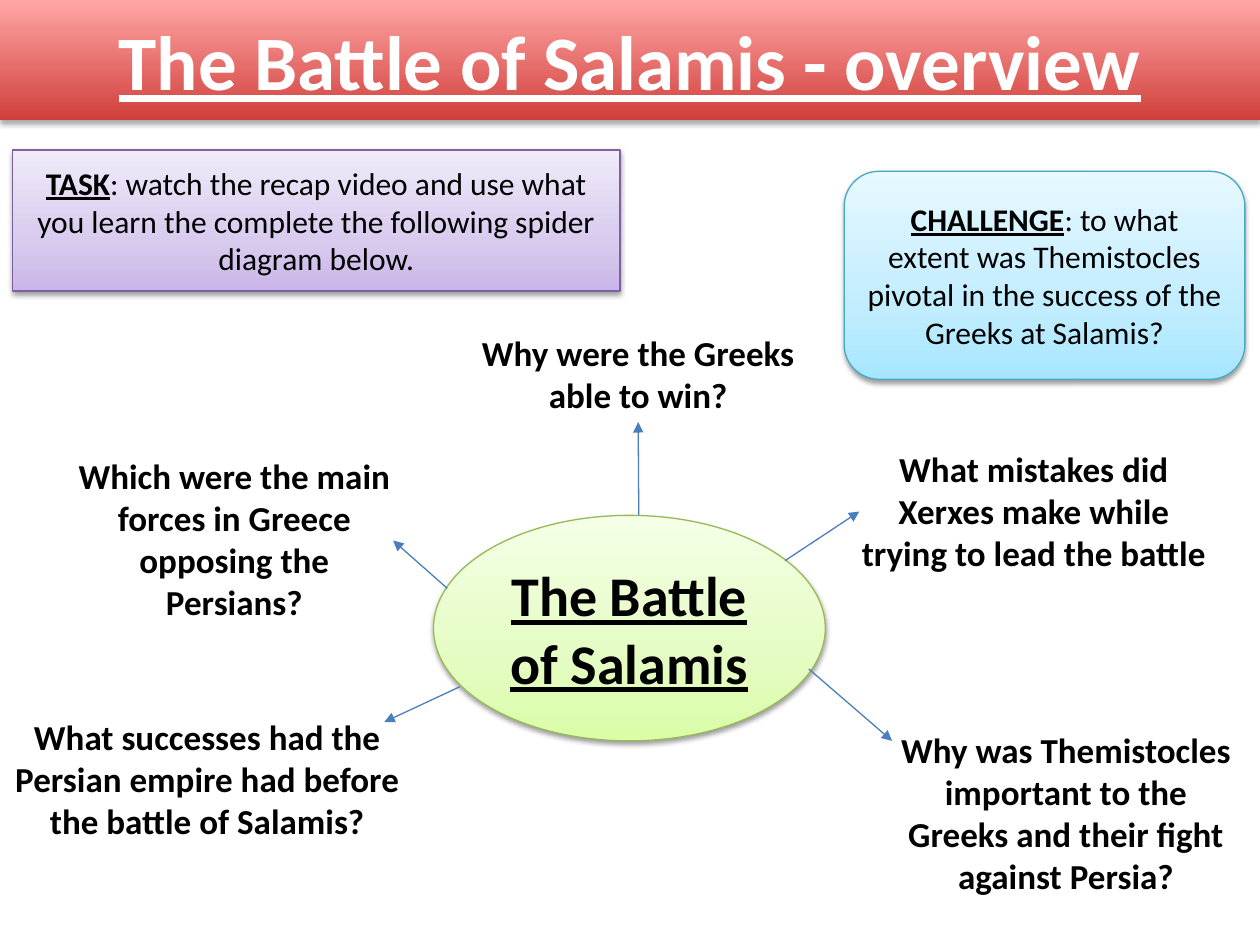
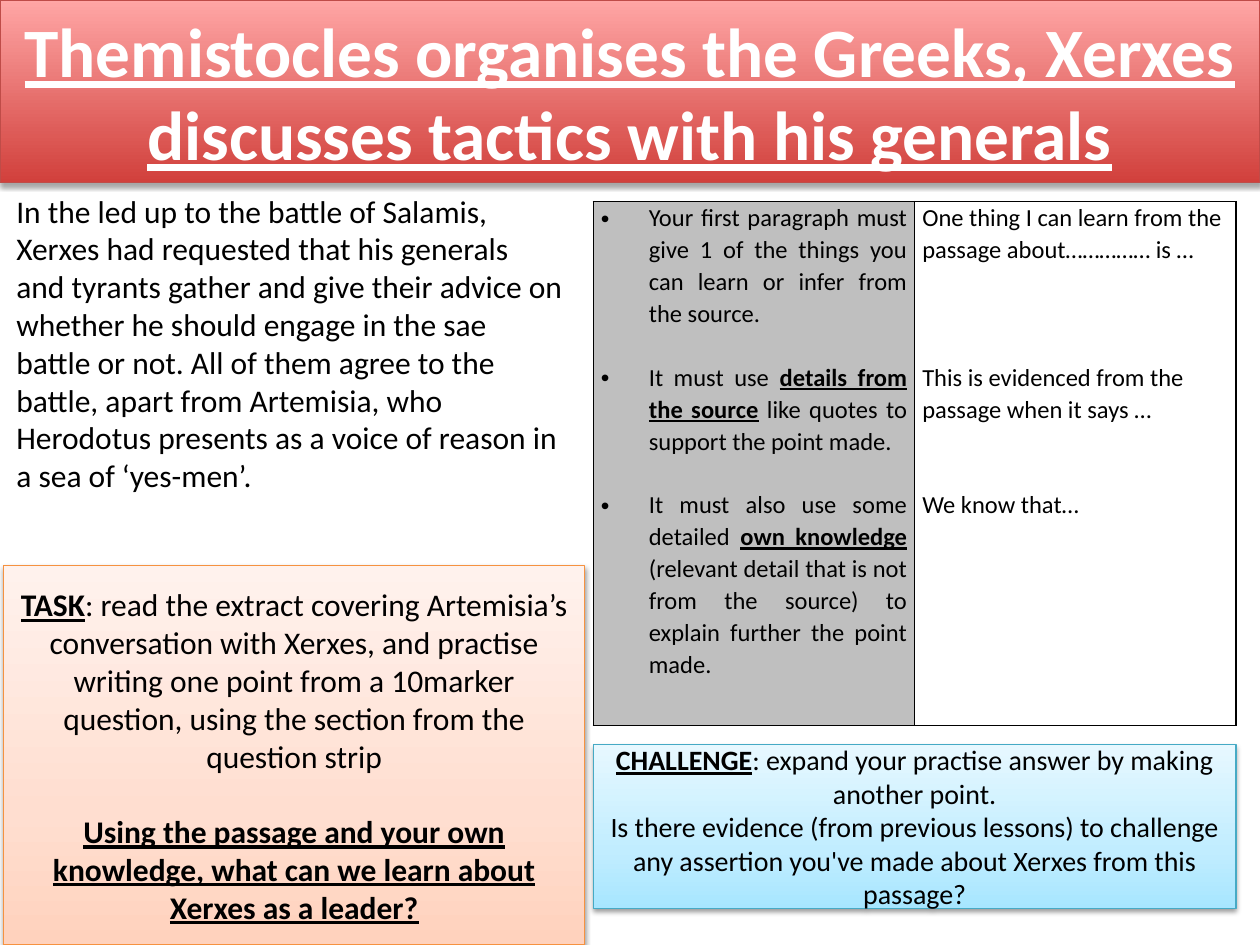
from copy import deepcopy

from lxml.etree import SubElement
from pptx import Presentation
from pptx.dml.color import RGBColor
from pptx.enum.shapes import MSO_CONNECTOR, MSO_SHAPE
from pptx.enum.text import MSO_ANCHOR, MSO_AUTO_SIZE, PP_ALIGN
from pptx.oxml import parse_xml
from pptx.oxml.ns import nsdecls, qn
from pptx.util import Inches, Pt

FONT = "Calibri"
BLACK = RGBColor(0, 0, 0)
WHITE = RGBColor(255, 255, 255)
GREY = RGBColor(0xBF, 0xBF, 0xBF)
ARROW = RGBColor(0x4B, 0x7E, 0xBC)
EDGE = RGBColor(0xBF, 0x4C, 0x48)
RED = (RGBColor(0xD1, 0x40, 0x3C), RGBColor(0xFF, 0xA6, 0xA5))
GREEN = (RGBColor(0xDA, 0xFD, 0xA7), RGBColor(0xE4, 0xFC, 0xC2),
         RGBColor(0xF5, 0xFF, 0xE7), RGBColor(0x98, 0xB9, 0x55))
PURPLE = (RGBColor(0xC9, 0xB5, 0xE8), RGBColor(0xD8, 0xCB, 0xEE),
          RGBColor(0xF0, 0xEA, 0xF9), RGBColor(0x7D, 0x60, 0xA0))
BLUE = (RGBColor(0xA7, 0xE6, 0xFF), RGBColor(0xC1, 0xED, 0xFF),
        RGBColor(0xE7, 0xF8, 0xFF), RGBColor(0x46, 0xAA, 0xC5))
ORANGE = (RGBColor(0xFF, 0xD2, 0xBD), RGBColor(0xFF, 0xDE, 0xD0),
          RGBColor(0xFF, 0xF2, 0xED), RGBColor(0xF6, 0x92, 0x40))


class Deck:
    """Draws styled elements on the current slide; *starred* text is bold and underlined."""

    def __init__(self):
        self.prs = Presentation()
        self.prs.slide_width = Inches(10)
        self.prs.slide_height = Inches(7.5)

    def start(self, layout):
        self.slide = self.prs.slides.add_slide(self.prs.slide_layouts[layout])

    def place(self, shape, box):
        shape.left, shape.top, shape.width, shape.height = map(Inches, box)

    def prose(self, frame, lines, size, color=BLACK, bold=False,
              align=PP_ALIGN.CENTER, gaps=(), space=None):
        for i, line in enumerate(lines):
            para = frame.paragraphs[0] if i == 0 else frame.add_paragraph()
            para.alignment = align
            if space:
                para.line_spacing = space
            if i < len(gaps):
                para.space_before = Pt(gaps[i])
            for j, part in enumerate(line.split("*")):
                if part:
                    run = para.add_run()
                    run.text = part
                    font = run.font
                    font.name, font.size = FONT, Pt(size)
                    font.color.rgb = color
                    font.bold = bold or j % 2 == 1
                    font.underline = j % 2 == 1

    def shade(self, shape, first, last, mid=None, depth=38, drop=1.6):
        fill = shape.fill
        fill.gradient()
        fill.gradient_angle = 90
        for stop, color, pos in zip(fill.gradient_stops, (first, last), (0, 1)):
            stop.color.rgb = color
            stop.position = pos
        props = shape.element.spPr
        if mid is not None:
            stops = props.find(qn("a:gradFill")).find(qn("a:gsLst"))
            extra = deepcopy(stops[0])
            extra.set("pos", "35000")
            extra[0].set("val", str(mid))
            stops.insert(1, extra)
        shape.shadow.inherit = False
        props.find(qn("a:effectLst")).append(parse_xml(
            f'<a:outerShdw {nsdecls("a")} blurRad="{Pt(3.1)}" dist="{Pt(drop)}" '
            'dir="5400000" rotWithShape="0"><a:srgbClr val="000000">'
            f'<a:alpha val="{depth * 1000}"/></a:srgbClr></a:outerShdw>'))

    def edge(self, line, color):
        line.color.rgb = color
        line.width = Pt(0.75)

    def title(self, text, height, size, line=None):
        shape = self.slide.shapes.title
        self.place(shape, (0, 0, 10, height))
        self.shade(shape, *RED, depth=35, drop=1.8)
        if line is not None:
            self.edge(shape.line, line)
        frame = shape.text_frame
        frame.auto_size = MSO_AUTO_SIZE.NONE
        frame.vertical_anchor = MSO_ANCHOR.MIDDLE
        self.prose(frame, [f"*{text}*"], size, WHITE)

    def body(self, text, box):
        shape = self.slide.placeholders[1]
        self.place(shape, box)
        frame = shape.text_frame
        frame.auto_size = MSO_AUTO_SIZE.NONE
        self.prose(frame, [text], 18, align=PP_ALIGN.LEFT)
        props = frame.paragraphs[0]._p.get_or_add_pPr()
        props.set("marL", "0")
        props.set("indent", "0")
        SubElement(props, qn("a:buNone"))

    def panel(self, kind, box, tones, lines, size=18, gaps=()):
        shape = self.slide.shapes.add_shape(kind, *map(Inches, box))
        first, mid, last, line = tones
        self.shade(shape, first, last, mid)
        self.edge(shape.line, line)
        frame = shape.text_frame
        frame.word_wrap = True
        frame.vertical_anchor = MSO_ANCHOR.MIDDLE
        self.prose(frame, lines, size, gaps=gaps)

    def label(self, text, box):
        shape = self.slide.shapes.add_textbox(*map(Inches, box))
        frame = shape.text_frame
        frame.word_wrap = True
        frame.auto_size = MSO_AUTO_SIZE.SHAPE_TO_FIT_TEXT
        self.prose(frame, [text], 20, bold=True)
        return shape

    def arrow(self, *ends):
        link = self.slide.shapes.add_connector(
            MSO_CONNECTOR.STRAIGHT, *map(Inches, ends))
        self.edge(link.line, ARROW)
        props = link.element.spPr
        SubElement(props.find(qn("a:ln")), qn("a:tailEnd"), type="triangle")
        SubElement(props, qn("a:effectLst"))
        return link

    def table(self, box, rows, cols):
        grid = self.slide.shapes.add_table(rows, cols, *map(Inches, box)).table
        grid.first_row = grid.horz_banding = False
        for cell in grid.iter_cells():
            cell.margin_left = cell.margin_right = Inches(0.06)
            cell.margin_top = cell.margin_bottom = 0
            cell.fill.background()
            props = cell._tc.get_or_add_tcPr()
            for i, side in enumerate("LRTB"):
                props.insert(i, parse_xml(
                    f'<a:ln{side} {nsdecls("a")} w="{Pt(1)}"><a:solidFill>'
                    f'<a:srgbClr val="{BLACK}"/></a:solidFill></a:ln{side}>'))
        return grid

    def bullet(self, frame, indent):
        for para in frame.paragraphs:
            props = para._p.get_or_add_pPr()
            props.set("marL", str(Inches(indent)))
            props.set("indent", str(Inches(-indent)))
            SubElement(props, qn("a:buFont"), typeface="Arial")
            SubElement(props, qn("a:buChar"), char="•")


def spider(deck):
    deck.start(5)
    deck.title("The Battle of Salamis - overview", 0.95, 44)
    deck.panel(MSO_SHAPE.OVAL, (3.44, 4.09, 3.11, 1.79), GREEN,
               ["*The Battle of Salamis*"], 32)
    for text, box in (
        ("What successes had the Persian empire had before the battle of Salamis?",
         (0.01, 5.63, 3.27, 1.11)),
        ("Which were the main forces in Greece opposing the Persians?",
         (0.44, 3.56, 2.84, 1.45)),
        ("Why was Themistocles important to the Greeks and their fight against Persia?",
         (7.04, 5.73, 2.84, 1.45)),
        ("What mistakes did Xerxes make while trying to lead the battle",
         (6.7, 3.5, 3.01, 1.11)),
    ):
        deck.label(text, box)
    top = deck.label("Why were the Greeks able to win?", (3.56, 2.58, 3.01, 0.77))
    deck.arrow(5.07, 4.09, 5.07, 3.35).end_connect(top, 2)
    for ends in ((6.23, 4.45, 6.82, 4.06), (6.42, 5.31, 7.08, 5.88),
                 (3.55, 4.67, 3.12, 4.29), (3.65, 5.45, 3.05, 5.73)):
        deck.arrow(*ends)
    deck.panel(MSO_SHAPE.RECTANGLE, (0.1, 1.19, 4.82, 1.12), PURPLE, [
        "*TASK*: watch the recap video and use what you learn the complete "
        "the following spider diagram below."])
    deck.panel(MSO_SHAPE.ROUNDED_RECTANGLE, (6.7, 1.36, 3.18, 1.65), BLUE, [
        "*CHALLENGE*: to what extent was Themistocles pivotal in the success "
        "of the Greeks at Salamis?"])


def tactics(deck):
    deck.start(1)
    deck.title("Themistocles organises the Greeks, Xerxes discusses tactics "
               "with his generals", 1.45, 39.6, EDGE)
    deck.body("In the led up to the battle of Salamis, Xerxes had requested that "
              "his generals and tyrants gather and give their advice on whether he "
              "should engage in the sae battle or not. All of them agree to the "
              "battle, apart from Artemisia, who Herodotus presents as a voice of "
              "reason in a sea of ‘yes-men’.", (0.03, 1.47, 4.54, 4.76))
    grid = deck.table((4.71, 1.6, 5.1, 4.16), 1, 2)
    rules, stems = grid.cell(0, 0), grid.cell(0, 1)
    rules.fill.solid()
    rules.fill.fore_color.rgb = GREY
    row = 18.2
    deck.prose(rules.text_frame, [
        "Your first paragraph must give 1 of the things you can learn or infer "
        "from the source.",
        "It must use *details from the source* like quotes to support the point made. ",
        "It must also use some detailed *own knowledge* (relevant detail that is "
        "not from the source) to explain further the point made. ",
    ], 14, align=PP_ALIGN.JUSTIFY, gaps=(0, row, row), space=1.07)
    deck.bullet(rules.text_frame, 0.38)
    deck.prose(stems.text_frame, [
        "One thing I can learn from the passage about…………… is …",
        "This is evidenced from the passage when it says …",
        "We know that…",
    ], 14, align=PP_ALIGN.LEFT, gaps=(0, 3 * row, 2 * row), space=1.07)
    deck.panel(MSO_SHAPE.RECTANGLE, (0.03, 4.49, 4.61, 3.01), ORANGE, [
        "*TASK*: read the extract covering Artemisia’s conversation with Xerxes, "
        "and practise writing one point from a 10marker question, using the "
        "section from the question strip",
        "*Using the passage and your own knowledge, what can we learn about "
        "Xerxes as a leader?*"], gaps=(0, 21.6))
    deck.panel(MSO_SHAPE.RECTANGLE, (4.71, 5.91, 5.1, 1.3), BLUE, [
        "*CHALLENGE*: expand your practise answer by making another point.",
        "Is there evidence (from previous lessons) to challenge any assertion "
        "you've made about Xerxes from this passage?"], 16)


def main():
    deck = Deck()
    spider(deck)
    tactics(deck)
    deck.prs.save("out.pptx")


if __name__ == "__main__":
    main()
